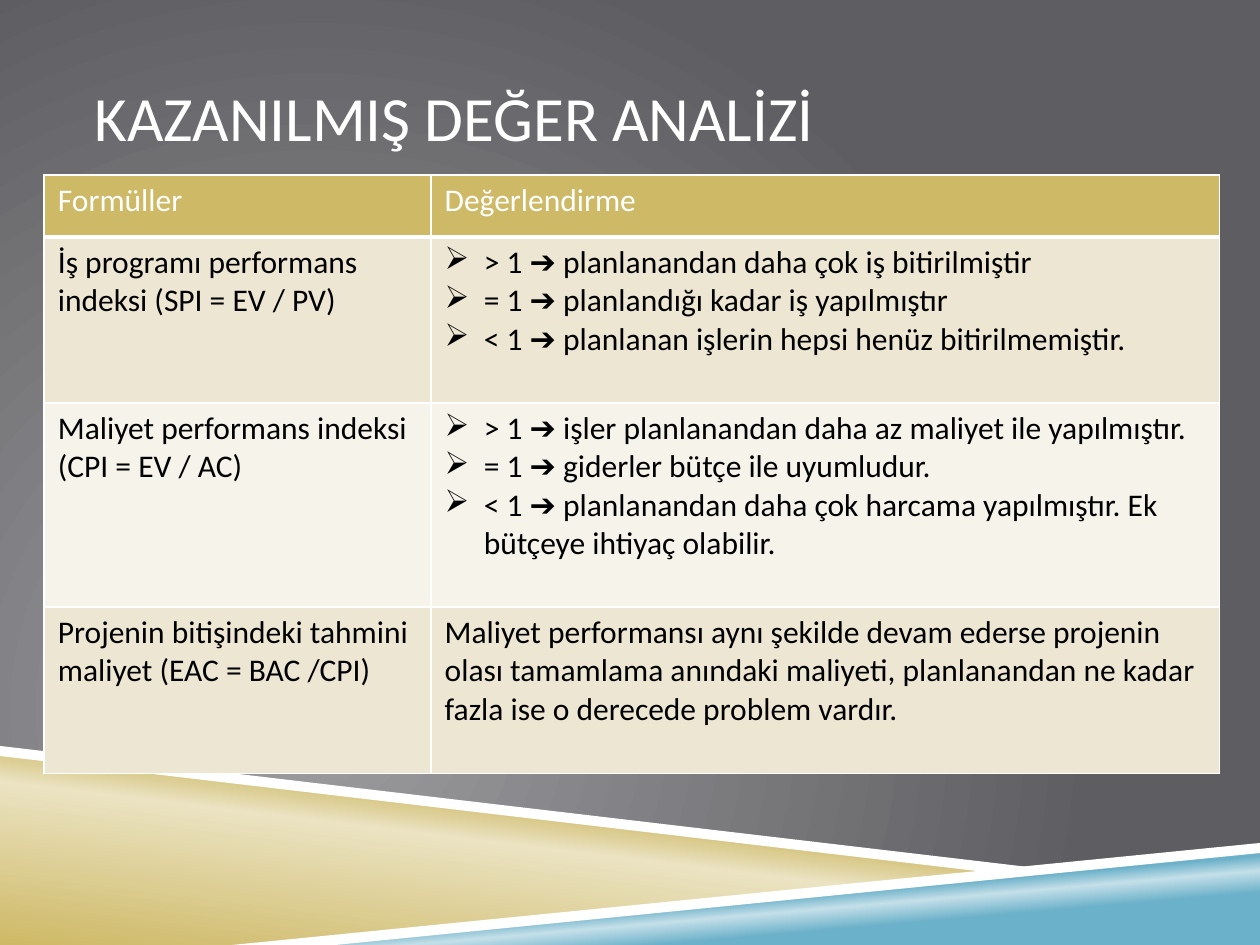
from dataclasses import dataclass

from lxml.etree import SubElement
from pptx import Presentation
from pptx.dml.color import RGBColor
from pptx.enum.text import MSO_ANCHOR
from pptx.oxml.ns import qn
from pptx.util import Inches, Pt

FONT = "Calibri"
WHITE, BLACK = "FFFFFF", "000000"
GOLD, PALE_GOLD, BLUE, PALE_BLUE = "CEB966", "EBE3C2", "6BB1C9", "C4E0E9"
BAND_DARK, BAND_LIGHT = "EDE6D3", "F6F3EA"


@dataclass
class Gradient:
    """Stops are (percent, colour); no angle means a circular gradient."""
    stops: list[tuple[int, str]]
    angle: int | None = None


@dataclass
class Band:
    points: list[tuple[float, float]]
    fill: str | Gradient


@dataclass
class Row:
    formula: str
    evaluation: list[str]
    height: float
    fill: str
    color: str = BLACK
    bottom_border: float = 1

    @property
    def bulleted(self) -> bool:
        return len(self.evaluation) > 1


BACKGROUND = Gradient([(0, "9C9B9E"), (100, "5E5D61")])
BANDS = [
    Band([(0, 5.97), (7.92, 6.92), (2, 7.5), (0, 7.5)],
         Gradient([(0, GOLD), (52, PALE_GOLD), (66, GOLD)], 277)),
    Band([(1.98, 7.5), (10, 6.72), (10, 7.5)],
         Gradient([(28, BLUE), (40, PALE_BLUE), (48, BLUE)], 265)),
    Band([(0, 5.92), (0, 6), (7.9, 6.93), (8.32, 6.9)], WHITE),
    Band([(10, 6.69), (1.84, 7.5), (2.66, 7.5), (10, 6.77)], WHITE),
]
COLUMN_WIDTHS = [3.07, 6.26]
ROWS = [
    Row("Formüller", ["Değerlendirme"], 0.49, GOLD, WHITE, 3),
    Row("İş programı performans indeksi (SPI = EV / PV)",
        ["> 1 ➔ planlanandan daha çok iş bitirilmiştir",
         "= 1 ➔ planlandığı kadar iş yapılmıştır",
         "< 1 ➔ planlanan işlerin hepsi henüz bitirilmemiştir."],
        1.32, BAND_DARK),
    Row("Maliyet performans indeksi (CPI = EV / AC)",
        ["> 1 ➔ işler planlanandan daha az maliyet ile yapılmıştır.",
         "= 1 ➔ giderler bütçe ile uyumludur.",
         "< 1 ➔ planlanandan daha çok harcama yapılmıştır. "
         "Ek bütçeye ihtiyaç olabilir."],
        1.62, BAND_LIGHT),
    Row("Projenin bitişindeki tahmini maliyet (EAC = BAC /CPI)",
        ["Maliyet performansı aynı şekilde devam ederse projenin olası "
         "tamamlama anındaki maliyeti, planlanandan ne kadar fazla ise "
         "o derecede problem vardır."],
        1.32, BAND_DARK),
]


def rgb(color: str) -> RGBColor:
    return RGBColor.from_string(color)


def apply_gradient(owner, element, gradient: Gradient) -> None:
    """Give the owner of a fill, whose XML is element, a gradient."""
    owner.fill.gradient()
    gradient_fill = next(element.iter(qn("a:gradFill")))
    for child in list(gradient_fill):
        gradient_fill.remove(child)
    stop_list = SubElement(gradient_fill, qn("a:gsLst"))
    for position, color in gradient.stops:
        stop = SubElement(stop_list, qn("a:gs"), pos=str(position * 1000))
        SubElement(stop, qn("a:srgbClr"), val=color)
    if gradient.angle is None:
        circle = SubElement(gradient_fill, qn("a:path"), path="circle")
        SubElement(circle, qn("a:fillToRect"),
                   l="50000", t="100000", r="100000", b="50000")
    else:
        SubElement(gradient_fill, qn("a:lin"),
                   ang=str(gradient.angle * 60000), scaled="0")


def style_paragraph(paragraph, size: float, color: str) -> None:
    paragraph.font.name = FONT
    paragraph.font.size = Pt(size)
    paragraph.font.color.rgb = rgb(color)


def add_band(slide, band: Band) -> None:
    points = [(Inches(x), Inches(y)) for x, y in band.points]
    builder = slide.shapes.build_freeform(*points[0])
    builder.add_line_segments(points[1:], close=True)
    shape = builder.convert_to_shape()
    shape.shadow.inherit = False
    shape.line.fill.background()
    if isinstance(band.fill, Gradient):
        apply_gradient(shape, shape._element, band.fill)
    else:
        shape.fill.solid()
        shape.fill.fore_color.rgb = rgb(band.fill)


def add_title(slide, text: str) -> None:
    box = slide.shapes.add_textbox(Inches(0.75), Inches(0.3), Inches(8.5), Inches(1.25))
    frame = box.text_frame
    frame.word_wrap = True
    frame.vertical_anchor = MSO_ANCHOR.MIDDLE
    frame.margin_left = frame.margin_right = 0
    frame.text = text
    style_paragraph(frame.paragraphs[0], 36, WHITE)


def add_bullet(paragraph) -> None:
    properties = paragraph._p.get_or_add_pPr()
    properties.set("marL", str(Inches(0.31)))
    properties.set("indent", str(-Inches(0.31)))
    SubElement(properties, qn("a:buChar"), char="➢")


def set_borders(cell, bottom: float) -> None:
    properties = cell._tc.get_or_add_tcPr()
    widths = {"a:lnL": 1, "a:lnR": 1, "a:lnT": 1, "a:lnB": bottom}
    for side, width in widths.items():
        line = SubElement(properties, qn(side), w=str(Pt(width)))
        fill = SubElement(line, qn("a:solidFill"))
        SubElement(fill, qn("a:srgbClr"), val=WHITE)


def fill_cell(cell, lines: list[str], row: Row, bulleted: bool) -> None:
    set_borders(cell, row.bottom_border)
    cell.fill.solid()
    cell.fill.fore_color.rgb = rgb(row.fill)
    cell.margin_left = cell.margin_right = Inches(0.11)
    cell.text_frame.text = "\n".join(lines)
    for paragraph in cell.text_frame.paragraphs:
        if bulleted:
            add_bullet(paragraph)
        style_paragraph(paragraph, 18, row.color)


def add_formula_table(slide) -> None:
    height = sum(row.height for row in ROWS)
    table = slide.shapes.add_table(
        len(ROWS), len(COLUMN_WIDTHS), Inches(0.35), Inches(1.39),
        Inches(sum(COLUMN_WIDTHS)), Inches(height)).table
    for column, width in zip(table.columns, COLUMN_WIDTHS):
        column.width = Inches(width)
    for index, row in enumerate(ROWS):
        table.rows[index].height = Inches(row.height)
        fill_cell(table.cell(index, 0), [row.formula], row, False)
        fill_cell(table.cell(index, 1), row.evaluation, row, row.bulleted)


def main() -> None:
    presentation = Presentation()
    presentation.slide_width = Inches(10)
    presentation.slide_height = Inches(7.5)
    slide = presentation.slides.add_slide(presentation.slide_layouts[6])
    apply_gradient(slide.background, slide._element, BACKGROUND)
    for band in BANDS:
        add_band(slide, band)
    add_title(slide, "KAZANILMIŞ DEĞER ANALİZİ")
    add_formula_table(slide)
    presentation.save("out.pptx")


if __name__ == "__main__":
    main()
